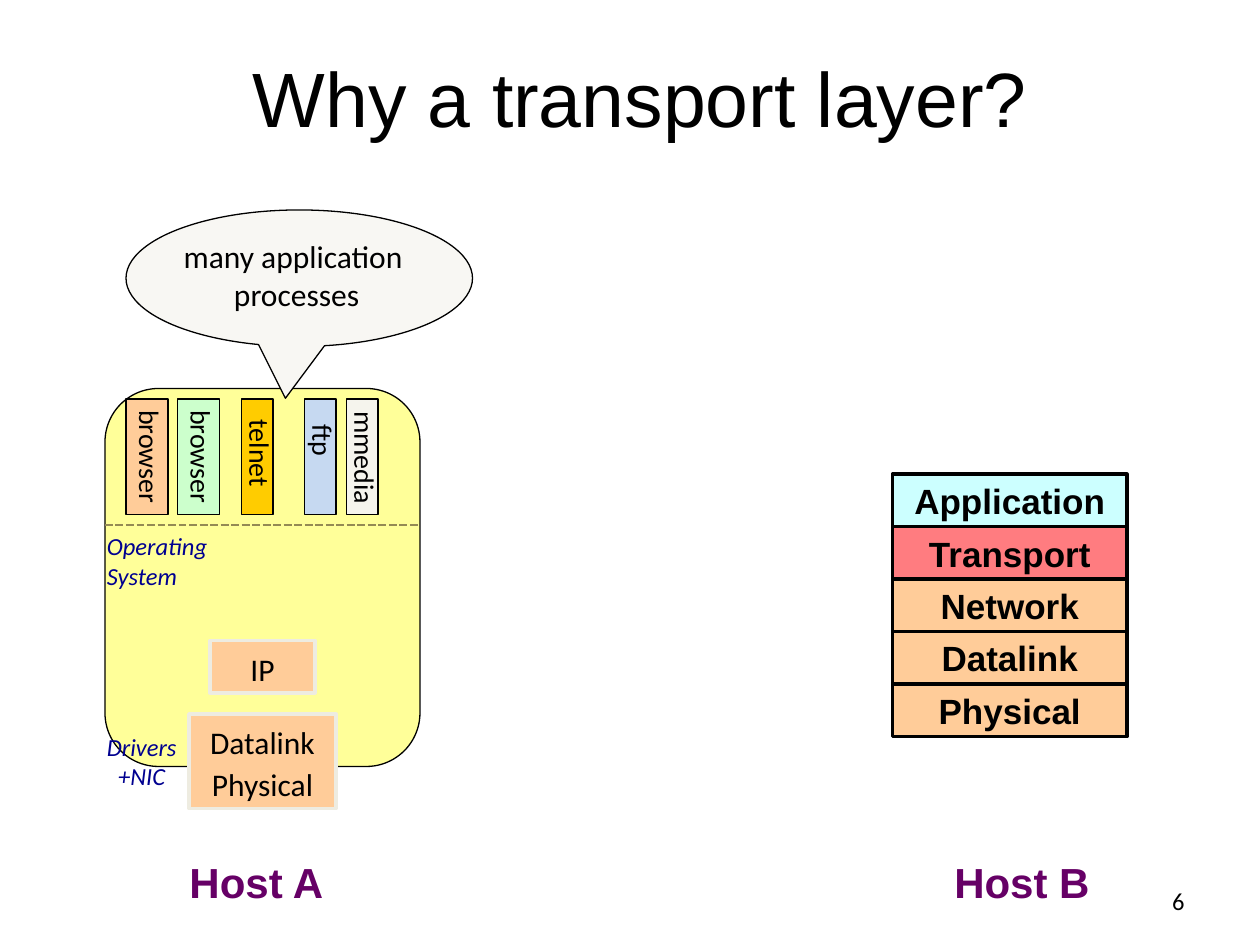
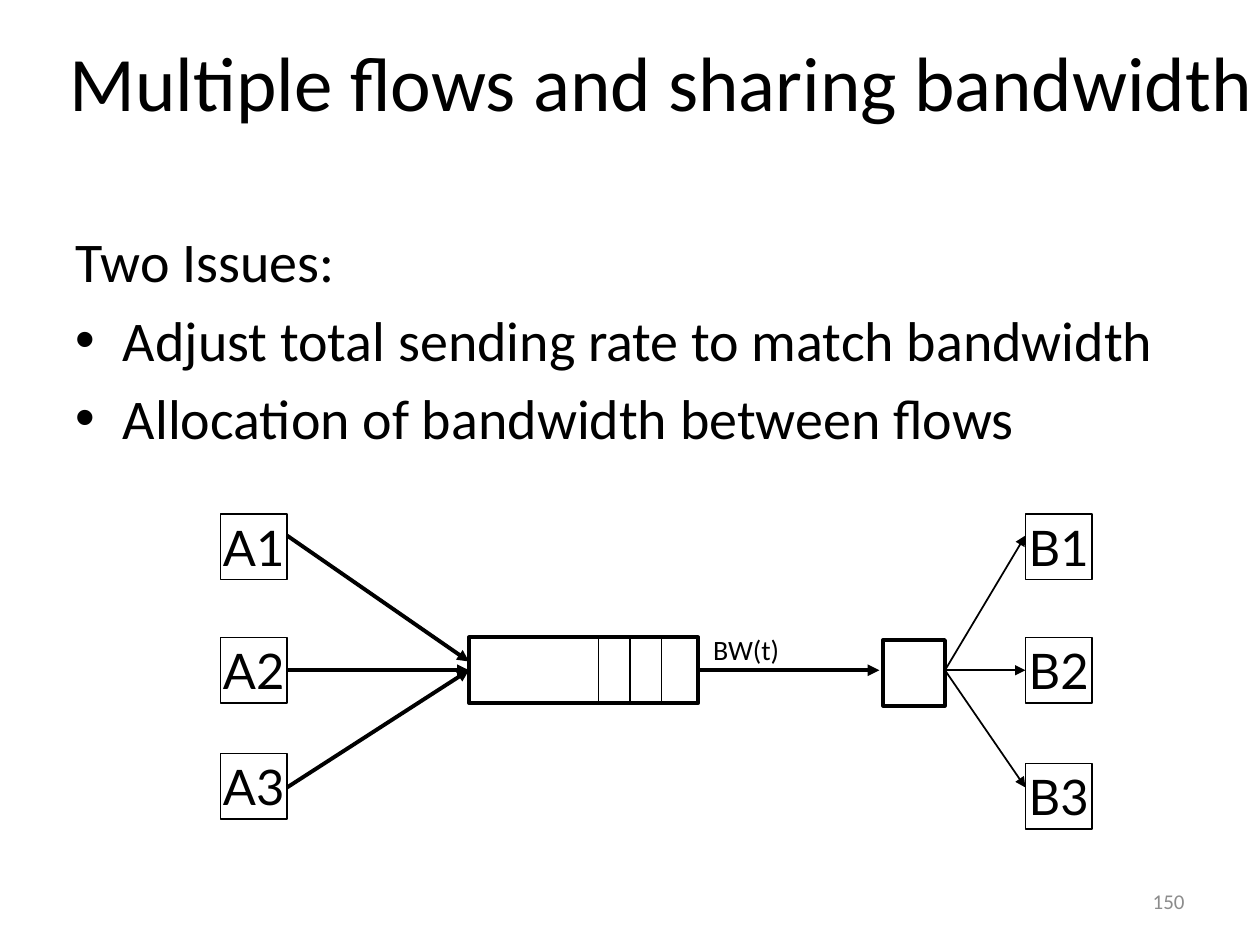
from dataclasses import dataclass

from lxml import etree
from pptx import Presentation
from pptx import util as u
from pptx.dml import color
from pptx.enum import dml, shapes, text
from pptx.oxml import ns

Pt = u.Pt
SHAPE = shapes.MSO_SHAPE
ALIGN = text.PP_ALIGN
ANCHOR = text.MSO_ANCHOR


@dataclass(frozen=True)
class Theme:
    # Fonts
    sans: str = "Arial"
    body: str = "Calibri"
    node: str = "Lato"
    # Type sizes
    title_size: float = 44
    list_size: float = 32
    node_size: float = 28
    host_size: float = 24
    layer_size: float = 20
    label_size: float = 18
    small_size: float = 16
    note_size: float = 14
    page_size: float = 12
    # Colours
    black: str = "000000"
    white: str = "FFFFFF"
    grey: str = "8C8C8C"
    purple: str = "660066"
    navy: str = "000090"
    peach: str = "FFCC99"
    red: str = "FF7C80"
    cyan: str = "CCFFFF"
    yellow: str = "FFFF99"
    gold: str = "FFCC00"
    green: str = "CCFFCC"
    blue: str = "C6D9F1"
    ivory: str = "F5F4ED"
    cream: str = "F8F7F3"
    sand: str = "EEECE1"
    olive: str = "948A54"
    # Line widths
    hairline: float = 0.75
    thin: float = 1
    medium: float = 2
    thick: float = 2.25


def rgb(value):
    return color.RGBColor.from_string(value)


class SlideBuilder:
    """Holds the theme and the current slide."""

    def __init__(self, deck, theme):
        self.deck = deck
        self.theme = theme
        self.slide = None

    def new_slide(self, layout):
        self.slide = self.deck.slides.add_slide(self.deck.slide_layouts[layout])

    def add_words(self, para, words, size, font=None, ink=None, bold=False, italic=False):
        """Add one run per line, with line breaks between them."""
        for number, line in enumerate(words.split("\n")):
            if number:
                para.add_line_break()
            span = para.add_run()
            span.text = line
            span.font.name = font or self.theme.body
            span.font.size = Pt(size)
            span.font.bold = bold
            span.font.italic = italic
            span.font.color.rgb = rgb(ink or self.theme.black)

    def set_frame(self, frame, anchor=ANCHOR.TOP, wrap=True, inset=(7.2, 3.6)):
        frame.auto_size = text.MSO_AUTO_SIZE.NONE
        frame.word_wrap = wrap
        frame.vertical_anchor = anchor
        frame.margin_left = frame.margin_right = Pt(inset[0])
        frame.margin_top = frame.margin_bottom = Pt(inset[1])

    def place(self, item, at):
        item.left, item.top, item.width, item.height = map(Pt, at)

    def title(self, words, at, font):
        box = self.slide.shapes.title
        self.place(box, at)
        self.set_frame(box.text_frame, ANCHOR.MIDDLE)
        para = box.text_frame.paragraphs[0]
        para.alignment = ALIGN.CENTER
        self.add_words(para, words, self.theme.title_size, font)

    def bullets(self, heading, items, at):
        """Fill the body: a heading without bullet, then bulleted items."""
        box = self.slide.placeholders[1]
        self.place(box, at)
        frame = box.text_frame
        self.set_frame(frame)
        para = frame.paragraphs[0]
        etree.SubElement(para._p.get_or_add_pPr(), ns.qn("a:buNone"))
        self.add_words(para, heading, self.theme.list_size)
        for item in items:
            self.add_words(frame.add_paragraph(), item, self.theme.list_size)

    def label(self, words, at, size, align=ALIGN.CENTER, wrap=False,
              anchor=ANCHOR.TOP, rotation=0, **style):
        box = self.slide.shapes.add_textbox(*map(Pt, at))
        box.rotation = rotation
        self.set_frame(box.text_frame, anchor, wrap)
        para = box.text_frame.paragraphs[0]
        para.alignment = align
        self.add_words(para, words, size, **style)

    def page_number(self, number, size, ink):
        self.label(number, (516, 500.5, 168, 28.5), size, ALIGN.RIGHT, True,
                   ANCHOR.MIDDLE, ink=ink)

    def shape(self, kind, at, fill, outline=None, width=None, lines=(),
              size=None, spacing=None, **style):
        item = self.slide.shapes.add_shape(kind, *map(Pt, at))
        item.shadow.inherit = False
        item.fill.solid()
        item.fill.fore_color.rgb = rgb(fill)
        item.line.color.rgb = rgb(outline or self.theme.black)
        item.line.width = Pt(width or self.theme.hairline)
        frame = item.text_frame
        self.set_frame(frame, ANCHOR.MIDDLE, False, (4, 2))
        for number, words in enumerate(lines):
            para = frame.add_paragraph() if number else frame.paragraphs[0]
            para.alignment = ALIGN.CENTER
            para.line_spacing = spacing
            self.add_words(para, words, size, **style)
        return item

    def line(self, start, end, width, ink=None, dash=None, arrow=False):
        item = self.slide.shapes.add_connector(
            shapes.MSO_CONNECTOR.STRAIGHT, *map(Pt, start + end))
        item.line.color.rgb = rgb(ink or self.theme.black)
        item.line.width = Pt(width)
        if dash:
            item.line.dash_style = dash
        properties = item._element.spPr
        if arrow:
            etree.SubElement(properties.find(ns.qn("a:ln")), ns.qn("a:tailEnd"),
                             type="triangle")
        etree.SubElement(properties, ns.qn("a:effectLst"))


def transport_slide(page):
    theme = page.theme
    page.new_slide(5)
    page.title("Why a transport layer? ", (36, 9.5, 672, 92), theme.sans)

    # Protocol stack of host B
    layers = [("Application", theme.cyan), ("Transport", theme.red),
              ("Network", theme.peach), ("Datalink", theme.peach),
              ("Physical", theme.peach)]
    for row, (name, fill) in enumerate(layers):
        page.shape(SHAPE.RECTANGLE, (510, 271 + 30 * row, 134, 30), fill,
                   width=theme.medium, lines=[name], size=theme.layer_size,
                   font=theme.sans, bold=True)

    # Host names
    for name, left in (("Host A", 100.5), ("Host B", 538)):
        page.label(name, (left, 486, 92, 36), theme.host_size,
                   font=theme.sans, ink=theme.purple, bold=True)

    # Host A with its lower layers
    host = page.shape(SHAPE.ROUNDED_RECTANGLE, (60, 222, 180, 216), theme.yellow)
    host.adjustments[0] = 0.17
    for lines, at in ((["Datalink", "Physical"], (108, 408, 84, 54)),
                      (["IP"], (120, 366, 60, 30))):
        page.shape(SHAPE.RECTANGLE, at, theme.peach, theme.sand, theme.medium,
                   lines, theme.label_size, 1.1)
    page.line((60, 300), (240, 300), 1.5, theme.olive, dml.MSO_LINE.SQUARE_DOT)

    # Application processes: name, left, width, fill, middle of the name
    processes = [("browser", 72, 24, theme.peach, 261),
                 ("browser", 101.5, 24, theme.green, 261),
                 ("telnet", 138, 18, theme.gold, 259),
                 ("ftp", 174, 18, theme.blue, 251.5),
                 ("mmedia", 198, 18, theme.ivory, 261.5)]
    for name, left, width, fill, middle in processes:
        page.shape(SHAPE.RECTANGLE, (left, 228, width, 66), fill)
        centre = left + width / 2 + 1.5
        page.label(name, (centre - 34, middle - 13.5, 68, 27),
                   theme.small_size, rotation=90)

    # Callout
    callout = page.shape(SHAPE.OVAL_CALLOUT, (72, 120, 198, 78), theme.cream)
    callout.adjustments[0] = -0.04
    callout.adjustments[1] = 0.88
    page.label("many application\n processes", (97, 132, 141, 51), theme.label_size)

    # Notes inside host A
    for words, at, align in (
            ("Drivers\n+NIC", (42, 414.5, 78, 41), ALIGN.CENTER),
            ("Operating\nSystem", (54, 300, 102, 41), ALIGN.LEFT)):
        page.label(words, at, theme.note_size, align, True,
                   ink=theme.navy, italic=True)
    page.page_number("6", theme.note_size, theme.black)


def bandwidth_slide(page):
    theme = page.theme
    page.new_slide(1)
    page.title("Multiple flows and sharing bandwidth", (6, 0, 744, 92), theme.body)
    page.bullets("Two Issues:",
                 ["Adjust total sending rate to match bandwidth",
                  "Allocation of bandwidth between flows"],
                 (36, 126, 648, 356.5))

    # Senders and receivers
    columns = [("A", 126, (293.75, 364.25, 430.5)),
               ("B", 586, (293.75, 364.25, 436.25))]
    for letter, left, tops in columns:
        for number, top in enumerate(tops, 1):
            page.shape(SHAPE.RECTANGLE, (left, top, 38, 37.5), theme.white,
                       lines=[f"{letter}{number}"], size=theme.node_size,
                       font=theme.node)

    # Queue with waiting packets, and the far router
    for at in ((268, 364.25, 131, 37.5), (504.75, 365.75, 35.25, 37.5)):
        page.shape(SHAPE.RECTANGLE, at, theme.white, width=theme.thick)
    for slot in range(3):
        across = 342 + 18 * slot
        page.line((across, 363.75), (across, 401.75), theme.thin)

    # Flows
    axis = 383
    for source, entry in ((306, 378), (axis, axis), (450, axis)):
        page.line((164, source), (268, entry), theme.thick, arrow=True)
    page.line((399, axis), (502.5, axis), theme.thick, arrow=True)
    for target in (306, axis, 450):
        page.line((540, axis), (586, target), theme.thin, arrow=True)
    page.label("BW(t)", (400.5, 358, 55.5, 26.5), theme.small_size, ALIGN.LEFT)
    page.page_number("150", theme.page_size, theme.grey)


def main():
    deck = Presentation()
    deck.slide_width, deck.slide_height = Pt(720), Pt(540)
    page = SlideBuilder(deck, Theme())
    transport_slide(page)
    bandwidth_slide(page)
    deck.save("out.pptx")


if __name__ == "__main__":
    main()
